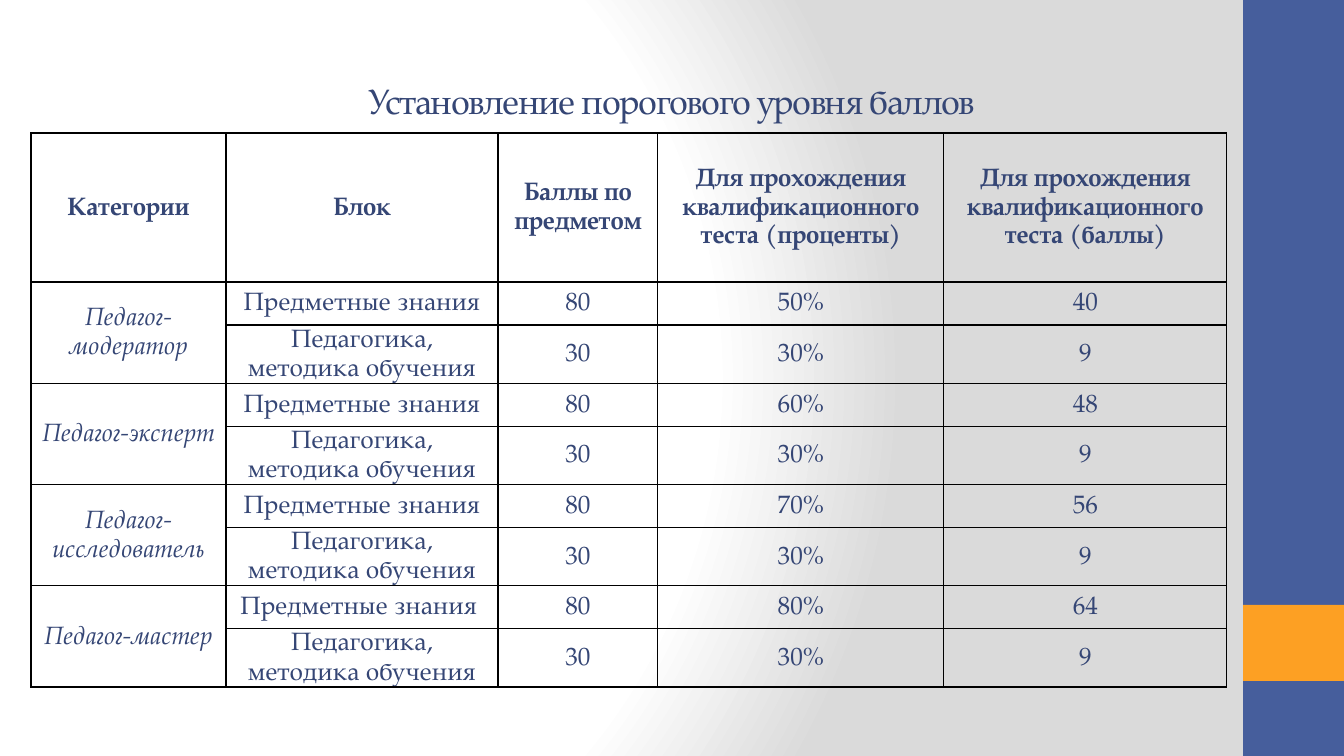
import lxml.etree
import pptx
import pptx.dml.color
import pptx.enum.shapes
import pptx.enum.text
import pptx.oxml
import pptx.oxml.ns
import pptx.util

RGB = pptx.dml.color.RGBColor
NAVY = RGB(0x35, 0x46, 0x75)
BLUE = RGB(0x46, 0x5E, 0x9C)
ORANGE = RGB(0xFD, 0xA0, 0x23)
BLACK = RGB(0x00, 0x00, 0x00)
WHITE = RGB(0xFF, 0xFF, 0xFF)
GREY = RGB(0xDA, 0xDA, 0xDA)

FONT = "TeX Gyre Pagella"
CENTER = pptx.enum.text.PP_ALIGN.CENTER
MIDDLE = pptx.enum.text.MSO_ANCHOR.MIDDLE
TOP = pptx.enum.text.MSO_ANCHOR.TOP
NS = pptx.oxml.ns.nsdecls("a")


def px(n):
    return pptx.util.Emu(round(n * 914400 / 100.8))


class Deck:
    def __init__(self, width, height):
        self.prs = pptx.Presentation()
        self.prs.slide_width, self.prs.slide_height = px(width), px(height)
        self.s = self.prs.slides.add_slide(self.prs.slide_layouts[5])

    def background(self, stops, center):
        fill = self.s.background.fill
        fill.gradient()
        grad = self.s.background._cSld.find(".//" + pptx.oxml.ns.qn("a:gradFill"))
        stops_xml = "".join(
            f'<a:gs pos="{pos * 1000}"><a:srgbClr val="{color}"/></a:gs>' for pos, color in stops)
        l, t, r, b = (n * 1000 for n in center)
        grad.getparent().replace(grad, pptx.oxml.parse_xml(
            f'<a:gradFill {NS} rotWithShape="1"><a:gsLst>{stops_xml}</a:gsLst>'
            f'<a:path path="circle"><a:fillToRect l="{l}" t="{t}" r="{r}" b="{b}"/></a:path>'
            '</a:gradFill>'))

    def rect(self, x, y, w, h, color):
        sp = self.s.shapes.add_shape(
            pptx.enum.shapes.MSO_SHAPE.RECTANGLE, px(x), px(y), px(w), px(h))
        sp.shadow.inherit = False
        sp.fill.solid()
        sp.fill.fore_color.rgb = color
        sp.line.fill.background()

    def style(self, p, size, spacing, bold=False, italic=False):
        p.alignment, p.line_spacing = CENTER, spacing
        f = p.font
        f.name, f.size, f.bold, f.italic = FONT, pptx.util.Pt(size), bold, italic
        f.color.rgb = NAVY

    def title(self, x, y, w, h, text):
        sp = self.s.shapes.title
        sp.left, sp.top, sp.width, sp.height = px(x), px(y), px(w), px(h)
        tf = sp.text_frame
        tf.text = text
        tf.word_wrap, tf.vertical_anchor = True, TOP
        tf.auto_size = pptx.enum.text.MSO_AUTO_SIZE.NONE
        tf.margin_top = tf.margin_bottom = 0
        p = tf.paragraphs[0]
        self.style(p, 25.2, 0.9)
        p.runs[0].font._element.set("spc", "-100")

    def table(self, x, y, cols, rows):
        tbl = self.s.shapes.add_table(
            len(rows), len(cols), px(x), px(y), px(sum(cols)), px(sum(rows))).table
        tbl.first_row = tbl.horz_banding = False
        for col, w in zip(tbl.columns, cols):
            col.width = px(w)
        for row, h in zip(tbl.rows, rows):
            row.height = px(h)
        for cell in tbl.iter_cells():
            cell.fill.background()
            self.borders(cell)
        return tbl

    def borders(self, cell):
        tc_pr = cell._tc.get_or_add_tcPr()
        for i, side in enumerate("LRTB"):
            tc_pr.insert(i, pptx.oxml.parse_xml(
                f'<a:ln{side} {NS} w="12700"><a:solidFill><a:srgbClr val="{BLACK}"/>'
                f'</a:solidFill></a:ln{side}>'))

    def cell(self, cell, text, inset, bold=False, italic=False):
        cell.vertical_anchor = MIDDLE
        cell.margin_left = cell.margin_right = px(inset)
        cell.margin_top = cell.margin_bottom = 0
        cell.text = text
        self.style(cell.text_frame.paragraphs[0], 18, 1.15, bold, italic)


HEADERS = ["Категории", "Блок", "Баллы по предметом",
           "Для прохождения квалификационного теста (проценты)",
           "Для прохождения квалификационного теста (баллы)"]
SUBJECT = "Предметные знания"
PEDAGOGY = ["Педагогика, методика обучения", "30", "30%", "9"]
CATEGORIES = [
    ("Педагог-модератор", [SUBJECT, "80", "50%", "40"]),
    ("Педагог-эксперт", [SUBJECT, "80", "60%", "48"]),
    ("Педагог-исследователь", [SUBJECT, "80", "70%", "56"]),
    ("Педагог-мастер", [SUBJECT + " ", "80", "80%", "64"]),
]


def main():
    deck = Deck(1344, 756)

    # Background and side band
    deck.background([(0, WHITE), (75, WHITE), (100, GREY)], (20, 50, 100, 50))
    deck.rect(1243, 0, 101, 756, BLUE)
    deck.rect(1243, 605, 101, 76, ORANGE)

    # Title
    deck.title(67, 84, 1210, 66, "Установление порогового уровня баллов")

    # Threshold table: header, then two rows for each category
    tbl = deck.table(31, 133, [195, 272, 160, 286, 283], [149] + [43] * 2 * len(CATEGORIES))
    for c, text in enumerate(HEADERS):
        deck.cell(tbl.cell(0, c), text, 7, bold=True)
    for i, (category, subject) in enumerate(CATEGORIES):
        top = 1 + 2 * i
        tbl.cell(top, 0).merge(tbl.cell(top + 1, 0))
        deck.cell(tbl.cell(top, 0), category, 7, italic=True)
        for r, values in enumerate([subject, PEDAGOGY], top):
            for c, text in enumerate(values, 1):
                deck.cell(tbl.cell(r, c), text, 7 if c == 1 else 1)

    deck.prs.save("out.pptx")


if __name__ == "__main__":
    main()
